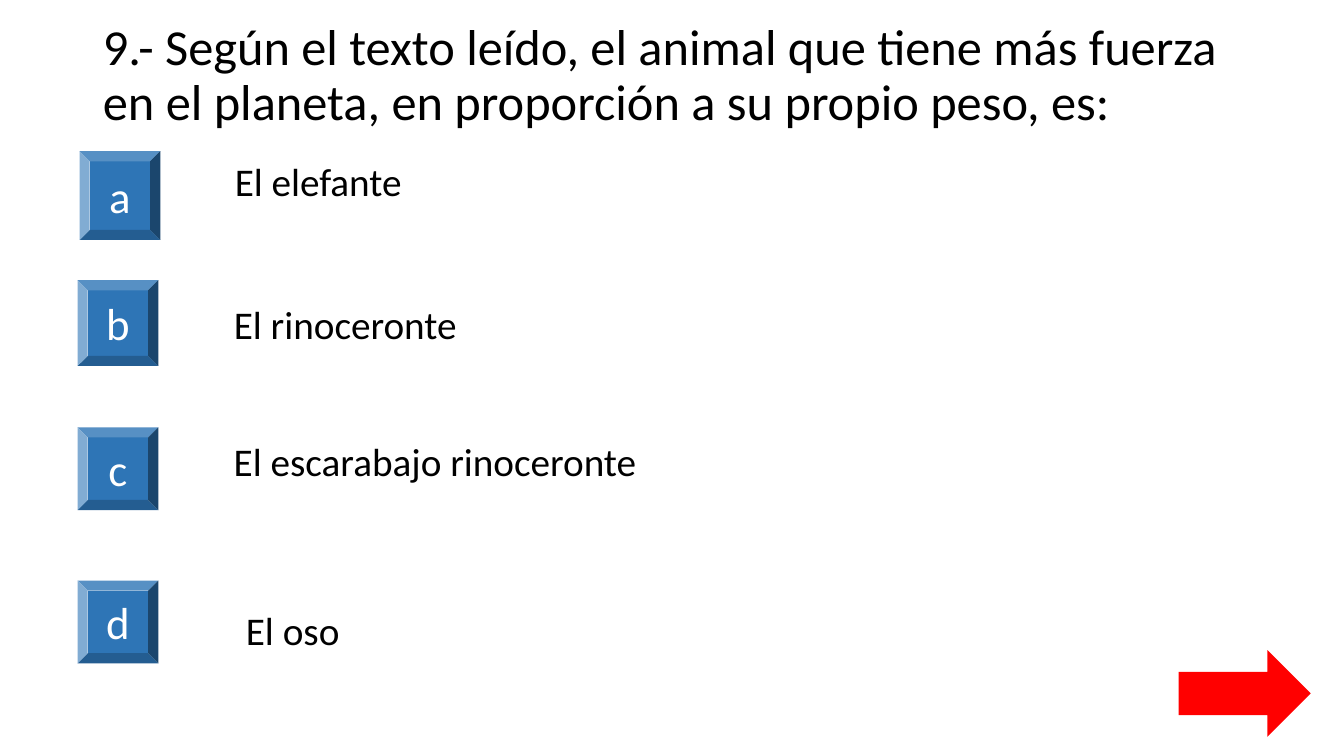
from pptx import Presentation
from pptx.dml.color import RGBColor
from pptx.enum.shapes import MSO_SHAPE as Shape
from pptx.enum.text import MSO_ANCHOR as Anchor, MSO_AUTO_SIZE as Fit, PP_ALIGN as Align
from pptx.util import Inches, Pt

TITLE = ("9.- Según el texto leído, el animal que tiene más fuerza "
         "en el planeta, en proporción a su propio peso, es:")
ANSWERS = [
    ("a", (0.79, 1.5, 0.8, 0.88), "El elefante", (2.23, 1.51, 8.88, 0.57)),
    ("b", (0.77, 2.78, 0.8, 0.85), "El rinoceronte", (2.22, 2.93, 10.78, 0.57)),
    ("c", (0.77, 4.24, 0.8, 0.82), "El escarabajo rinoceronte", (2.22, 4.29, 9.77, 0.57)),
    ("d", (0.77, 5.76, 0.8, 0.82), "El oso", (2.34, 5.97, 8.95, 0.57)),
]


def color(code):
    """Turn a hex string into a colour."""
    return RGBColor.from_string(code)


def write(frame, text, size, code, align=Align.LEFT):
    """Add one run to the first paragraph and return the paragraph."""
    para = frame.paragraphs[0]
    para.alignment = align
    run = para.add_run()
    run.text = text
    run.font.name = "Calibri"
    run.font.size = Pt(size)
    run.font.color.rgb = color(code)
    return para


def add_title(slide, box, text):
    """Place and format the title placeholder."""
    title = slide.shapes.title
    title.left, title.top, title.width, title.height = map(Inches, box)
    frame = title.text_frame
    frame.word_wrap = True
    frame.auto_size = Fit.NONE
    frame.vertical_anchor = Anchor.MIDDLE
    write(frame, text, 36, "000000").line_spacing = 0.9


def add_solid(slide, kind, box, code):
    """Add a flat preset shape without outline."""
    shape = slide.shapes.add_shape(kind, *map(Inches, box))
    shape.shadow.inherit = False
    shape.fill.solid()
    shape.fill.fore_color.rgb = color(code)
    shape.line.fill.background()
    return shape


def add_button(slide, box, letter):
    """Add a bevelled button with its letter."""
    frame = add_solid(slide, Shape.BEVEL, box, "2E75B6").text_frame
    frame.vertical_anchor = Anchor.MIDDLE
    write(frame, letter, 32, "FFFFFF", Align.CENTER)


def add_answer(slide, box, text):
    """Add the text of one answer."""
    frame = slide.shapes.add_textbox(*map(Inches, box)).text_frame
    frame.word_wrap = True
    frame.auto_size = Fit.SHAPE_TO_FIT_TEXT
    write(frame, text, 28, "000000")


def main():
    """Build the quiz slide."""
    deck = Presentation()
    deck.slide_width, deck.slide_height = Inches(13.33), Inches(7.5)
    slide = deck.slides.add_slide(deck.slide_layouts[5])
    add_title(slide, (0.92, 0.4, 11.5, 0.72), TITLE)
    for letter, button, text, area in ANSWERS:
        add_button(slide, button, letter)
        add_answer(slide, area, text)
    add_solid(slide, Shape.RIGHT_ARROW, (11.69, 6.45, 1.31, 0.86), "FF0000")
    deck.save("out.pptx")


if __name__ == "__main__":
    main()
